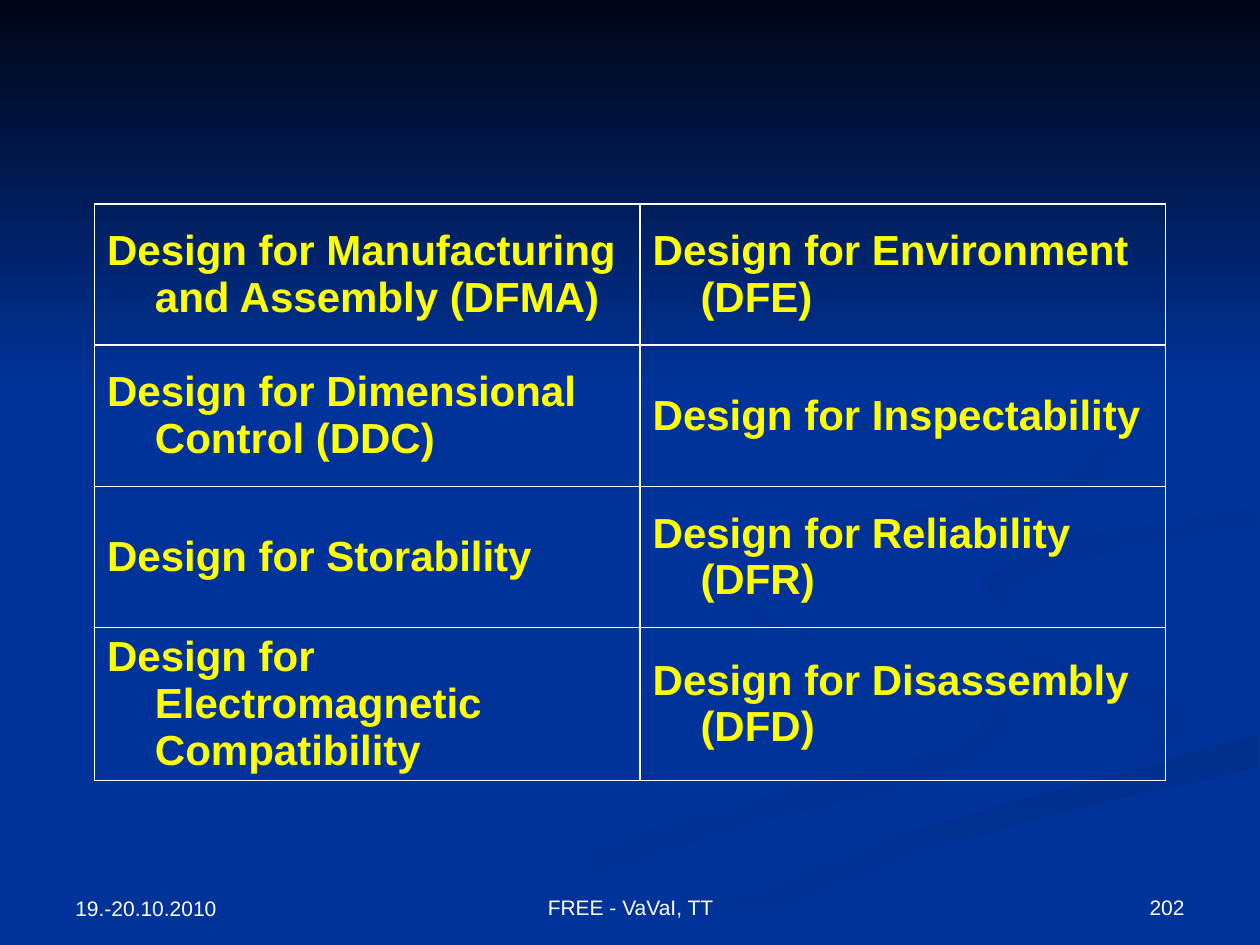
from dataclasses import dataclass
from lxml import etree
from pptx import Presentation
from pptx import util as u
from pptx.dml.color import RGBColor
from pptx.enum import text
from pptx.oxml import ns

PX = 9144
FONT = "Arial"
NAVY = "003399"
WHITE = "FFFFFF"
YELLOW = "FFFF00"
STEPS = 5

Edge = list[tuple[int, int]]


@dataclass
class Ribbon:
    start: str
    end: str
    angle: int
    edges: list[Edge]


@dataclass
class Footer:
    words: str
    left: int
    top: int
    width: int
    align: text.PP_ALIGN


SWEEP = [(503, 749), (630, 693), (765, 647), (904, 610), (999, 581)]
BEND = [(781, 460), (822, 434), (899, 418), (999, 402)]
HOOK = [(724, 464), (745, 490), (831, 519), (920, 547), (943, 570)]

RIBBONS = [
    Ribbon(NAVY, "003193", 0, [
        [(575, 459), (594, 485), (682, 519), (781, 553), (800, 581),
         (740, 618), (594, 656), (466, 700), (361, 749)],
        [(300, 749), (417, 690), (579, 639), (749, 594), (785, 562),
         (728, 535), (611, 499), (570, 472), (575, 459)],
    ]),
    Ribbon(NAVY, "003193", 45, [
        HOOK + [(932, 589), (894, 605)],
        [(894, 605), (918, 581), (892, 553), (815, 530), (739, 494), (724, 464)],
    ]),
    Ribbon("002F8C", NAVY, 90, [
        SWEEP,
        [(998, 609), (821, 651), (695, 692), (571, 749)],
    ]),
    Ribbon(NAVY, NAVY, 0, [
        HOOK + [(911, 600), (780, 634), (619, 684), (477, 749)],
        SWEEP,
        [(999, 538), (866, 509), (794, 480), (781, 460)],
        BEND,
        [(999, 387), (874, 408), (755, 432), (724, 464)],
    ]),
    Ribbon("003091", NAVY, 45, [
        BEND,
        [(998, 420), (896, 435), (809, 466), (826, 496)],
        [(826, 496), (791, 478), (781, 460)],
    ]),
    Ribbon("002F8E", NAVY, 45, [
        [(762, 233), (843, 275), (890, 324), (876, 378), (786, 412), (683, 430)],
        [(683, 430), (606, 452), (597, 480), (622, 500)],
        [(622, 500), (577, 462), (649, 420), (818, 386), (889, 335),
         (846, 279), (762, 233)],
    ]),
    Ribbon("000514", NAVY, 90, [[(0, 0), (1000, 0)], [(1000, 308), (0, 308)]]),
]

METHODS = [
    ("Design for Manufacturing and Assembly (DFMA)", "Design for Environment (DFE)"),
    ("Design for Dimensional Control (DDC)", "Design for Inspectability"),
    ("Design for Storability", "Design for Reliability (DFR)"),
    ("Design for Electromagnetic Compatibility", "Design for Disassembly (DFD)"),
]
COLUMN_WIDTHS = (433, 417)
ROW_HEIGHT = 112
HANGING = 38

FOOTERS = [
    Footer("19.-20.10.2010", 50, 684, 233, text.PP_ALIGN.LEFT),
    Footer("202", 717, 683, 233, text.PP_ALIGN.RIGHT),
    Footer("FREE - VaVaI, TT", 342, 683, 317, text.PP_ALIGN.CENTER),
]


def rgb(value: str) -> RGBColor:
    return RGBColor.from_string(value)


def format_runs(para, size: int, color: str, bold: bool = False) -> None:
    for span in para.runs:
        span.font.name = FONT
        span.font.size = u.Pt(size)
        span.font.bold = bold
        span.font.color.rgb = rgb(color)


def spline(a: int, b: int, c: int, d: int, t: float) -> int:
    curve = (2 * a - 5 * b + 4 * c - d) * t + (3 * b - a - 3 * c + d) * t * t
    return round(b + ((c - a) + curve) * t / 2)


def smooth(edge: Edge) -> Edge:
    padded = [edge[0], *edge, edge[-1]]
    points = [
        tuple(spline(*axis, step / STEPS) for axis in zip(*padded[i:i + 4]))
        for i in range(len(edge) - 1)
        for step in range(STEPS)
    ]
    return points + [edge[-1]]


def draw_ribbon(page, ribbon: Ribbon) -> None:
    outline = [point for edge in ribbon.edges for point in smooth(edge)]
    builder = page.shapes.build_freeform(*outline[0], scale=PX)
    builder.add_line_segments(outline[1:], close=True)
    shape = builder.convert_to_shape()
    shape.shadow.inherit = False
    shape.line.fill.background()
    if ribbon.start == ribbon.end:
        shape.fill.solid()
        shape.fill.fore_color.rgb = rgb(ribbon.start)
        return
    shape.fill.gradient()
    shape.fill.gradient_angle = (360 - ribbon.angle) % 360
    for stop, color, position in zip(
        shape.fill.gradient_stops, (ribbon.start, ribbon.end), (0, 1)
    ):
        stop.color.rgb = rgb(color)
        stop.position = position


def add_borders(cell, color: str) -> None:
    properties = cell._tc.get_or_add_tcPr()
    for index, side in enumerate(("lnL", "lnR", "lnT", "lnB")):
        line = etree.Element(ns.qn(f"a:{side}"), w=str(u.Pt(1)))
        fill = etree.SubElement(line, ns.qn("a:solidFill"))
        etree.SubElement(fill, ns.qn("a:srgbClr"), val=color)
        properties.insert(index, line)


def fill_cell(cell, words: str) -> None:
    cell.text_frame.text = words
    cell.vertical_anchor = text.MSO_ANCHOR.MIDDLE
    cell.fill.background()
    add_borders(cell, WHITE)
    para = cell.text_frame.paragraphs[0]
    format_runs(para, 24, YELLOW, bold=True)
    properties = para._p.get_or_add_pPr()
    properties.set("marL", str(HANGING * PX))
    properties.set("indent", str(-HANGING * PX))


def draw_methods(page) -> None:
    table = page.shapes.add_table(
        len(METHODS), len(COLUMN_WIDTHS), 75 * PX, 162 * PX,
        sum(COLUMN_WIDTHS) * PX, len(METHODS) * ROW_HEIGHT * PX,
    ).table
    table.first_row = False
    table.horz_banding = False
    for column, width in zip(table.columns, COLUMN_WIDTHS):
        column.width = width * PX
    for row, names in zip(table.rows, METHODS):
        for cell, name in zip(row.cells, names):
            fill_cell(cell, name)


def draw_footer(page, footer: Footer) -> None:
    box = page.shapes.add_textbox(
        footer.left * PX, footer.top * PX, footer.width * PX, 52 * PX
    )
    box.text_frame.word_wrap = True
    box.text_frame.vertical_anchor = text.MSO_ANCHOR.BOTTOM
    box.text_frame.text = footer.words
    para = box.text_frame.paragraphs[0]
    para.alignment = footer.align
    format_runs(para, 12, WHITE)


def main() -> None:
    deck = Presentation()
    deck.slide_width = 1000 * PX
    deck.slide_height = 750 * PX
    page = deck.slides.add_slide(deck.slide_layouts[6])
    page.background.fill.solid()
    page.background.fill.fore_color.rgb = rgb(NAVY)
    for ribbon in RIBBONS:
        draw_ribbon(page, ribbon)
    draw_methods(page)
    for footer in FOOTERS:
        draw_footer(page, footer)
    deck.save("out.pptx")


if __name__ == "__main__":
    main()
